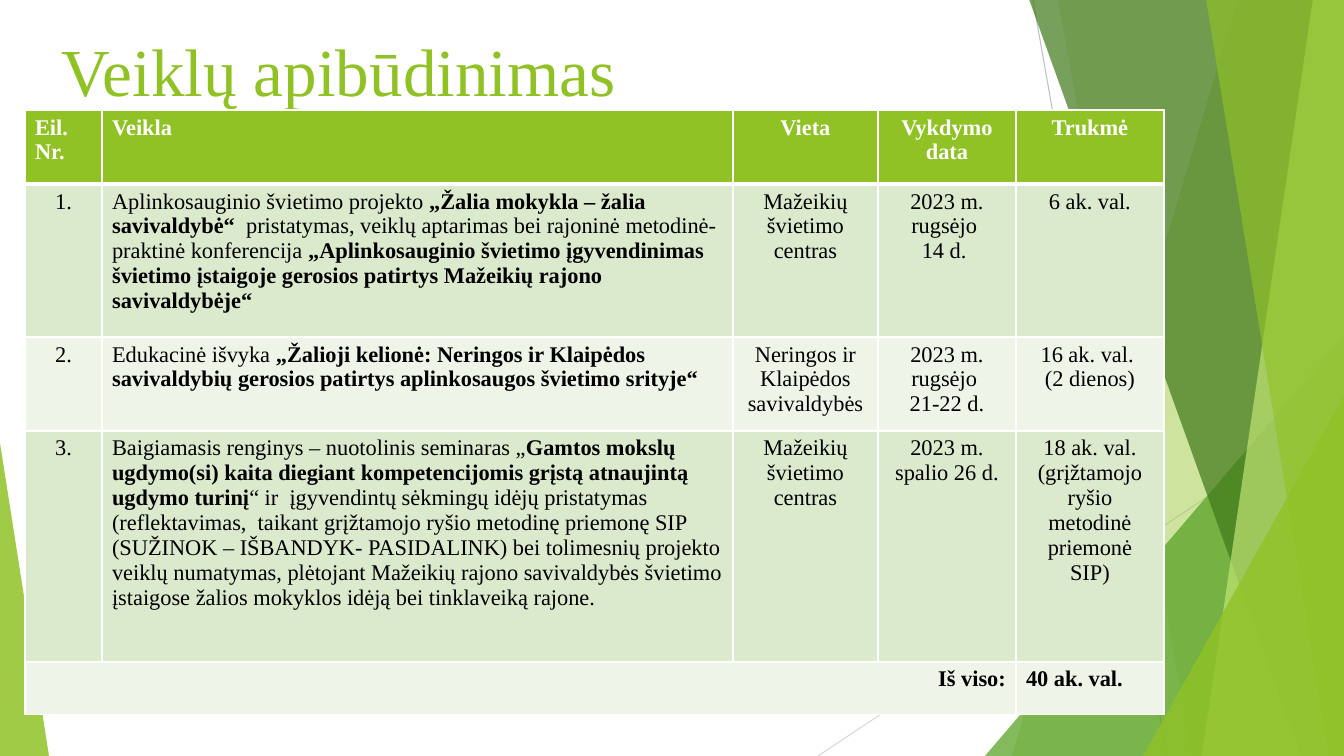
from dataclasses import dataclass

from lxml import etree
from pptx import Presentation
from pptx.dml.color import RGBColor
from pptx.enum.shapes import MSO_CONNECTOR, MSO_SHAPE
from pptx.enum.text import MSO_ANCHOR, PP_ALIGN
from pptx.oxml.ns import qn
from pptx.util import Pt

TRIANGLE = MSO_SHAPE.ISOSCELES_TRIANGLE
STRAIGHT = MSO_CONNECTOR.STRAIGHT
TOP = MSO_ANCHOR.TOP
LEFT, CENTER, RIGHT = PP_ALIGN.LEFT, PP_ALIGN.CENTER, PP_ALIGN.RIGHT

EMU_PER_PX = 914400 / 100.8
WIDTH, HEIGHT = 1344, 756


@dataclass(frozen=True)
class Theme:
    font: str = "Times New Roman"
    title_size: int = 48
    body_size: int = 16
    green: str = "90C226"
    mid_green: str = "54A021"
    dark_green: str = "3F7819"
    light_green: str = "C0E474"
    band_dark: str = "DBE9CD"
    band_light: str = "EEF4E8"
    white: str = "FFFFFF"
    black: str = "000000"
    grey: str = "BFBFBF"
    light_grey: str = "D9D9D9"


THEME = Theme()

COLUMNS = [77, 631, 145, 138, 148]
ROWS = [74, 153, 94, 231, 53]
ALIGNS = [CENTER, LEFT, CENTER, CENTER, CENTER]
HEADER_ALIGNS = [LEFT, LEFT, CENTER, CENTER, CENTER]

# Text between ** marks is bold
HEADER = ["Eil. Nr.", "Veikla", "Vieta", "Vykdymo data", "Trukmė"]
ACTIVITIES = [
    ["1.",
     "Aplinkosauginio švietimo projekto **„Žalia mokykla – žalia savivaldybė“**"
     "  pristatymas, veiklų aptarimas bei rajoninė metodinė-praktinė konferencija "
     "**„Aplinkosauginio švietimo įgyvendinimas švietimo įstaigoje gerosios "
     "patirtys Mažeikių rajono savivaldybėje“**",
     "Mažeikių švietimo centras", "2023 m. rugsėjo \n14 d. ", "6 ak. val."],
    ["2.",
     "Edukacinė išvyka **„Žalioji kelionė: Neringos ir Klaipėdos savivaldybių "
     "gerosios patirtys aplinkosaugos švietimo srityje“**",
     "Neringos ir Klaipėdos savivaldybės", "2023 m. rugsėjo \n21-22 d.",
     "16 ak. val. \n(2 dienos)"],
    ["3.",
     "Baigiamasis renginys – nuotolinis seminaras „**Gamtos mokslų ugdymo(si) "
     "kaita diegiant kompetencijomis grįstą atnaujintą ugdymo turinį**“ ir  "
     "įgyvendintų sėkmingų idėjų pristatymas (reflektavimas,  taikant grįžtamojo "
     "ryšio metodinę priemonę SIP (SUŽINOK – IŠBANDYK- PASIDALINK) bei tolimesnių "
     "projekto veiklų numatymas, plėtojant Mažeikių rajono savivaldybės švietimo "
     "įstaigose žalios mokyklos idėją bei tinklaveiką rajone.",
     "Mažeikių švietimo centras", "2023 m. spalio 26 d.",
     "18 ak. val.\n(grįžtamojo ryšio metodinė priemonė SIP)"],
]


def px(n):
    return round(n * EMU_PER_PX)


def rgb(color):
    return RGBColor.from_string(color)


def write(tf, text, size=THEME.body_size, color=THEME.black, bold=False, align=LEFT):
    tf.word_wrap = True
    for i, line in enumerate(text.split("\n")):
        p = tf.paragraphs[0] if i == 0 else tf.add_paragraph()
        p.alignment = align
        for j, part in enumerate(line.split("**")):
            if part:
                r = p.add_run()
                r.text = part
                r.font.name = THEME.font
                r.font.size = Pt(size)
                r.font.bold = bold or j % 2 == 1
                r.font.color.rgb = rgb(color)


def paint(sp, color, opacity):
    sp.shadow.inherit = False
    sp.line.fill.background()
    sp.fill.solid()
    sp.fill.fore_color.rgb = rgb(color)
    clr = sp.fill._xPr.find(qn("a:solidFill"))[0]
    etree.SubElement(clr, qn("a:alpha"), val=str(opacity * 1000))


def add_line(s, x1, y1, x2, y2, color):
    line = s.shapes.add_connector(STRAIGHT, px(x1), px(y1), px(x2), px(y2))
    line.line.color.rgb = rgb(color)
    line.line.width = Pt(0.75)
    etree.SubElement(line._element.spPr, qn("a:effectLst"))


def add_facet(s, top_x, bottom_x, color, opacity):
    """Band from a slanted edge to the right side of the slide."""
    fb = s.shapes.build_freeform(top_x, -1, scale=EMU_PER_PX)
    fb.add_line_segments([(WIDTH, -1), (WIDTH, HEIGHT), (bottom_x, HEIGHT)])
    paint(fb.convert_to_shape(), color, opacity)


def add_triangle(s, x, y, w, peak, color, opacity):
    sp = s.shapes.add_shape(TRIANGLE, px(x), px(y), px(w), px(HEIGHT - y))
    sp.adjustments[0] = peak
    paint(sp, color, opacity)


def add_title(s, text):
    tf = s.shapes.add_textbox(px(52), px(24), px(948), px(86)).text_frame
    tf.vertical_anchor = TOP
    tf.margin_top = px(5)
    write(tf, text, size=THEME.title_size, color=THEME.green)


def set_borders(cell, **widths):
    tcPr = cell._tc.get_or_add_tcPr()
    for side in "LRTB":
        ln = etree.SubElement(tcPr, qn(f"a:ln{side}"), w=str(Pt(widths.get(side, 1))))
        fill = etree.SubElement(ln, qn("a:solidFill"))
        etree.SubElement(fill, qn("a:srgbClr"), val=THEME.white)


def fill_cell(cell, color):
    cell.fill.solid()
    cell.fill.fore_color.rgb = rgb(color)


def add_activity_table(s):
    frame = s.shapes.add_table(len(ROWS), len(COLUMNS), px(25), px(110),
                               px(sum(COLUMNS)), px(sum(ROWS)))
    table = frame.table
    for col, w in zip(table.columns, COLUMNS):
        col.width = px(w)
    for row, h in zip(table.rows, ROWS):
        row.height = px(h)

    # Borders and bands, with a thick rule under the header
    fills = [THEME.green] + [THEME.band_dark, THEME.band_light] * 2
    thick = {0: {"B": 3}, 1: {"T": 3}}
    for i, color in enumerate(fills):
        for cell in table.rows[i].cells:
            set_borders(cell, **thick.get(i, {}))
            fill_cell(cell, color)

    # Header and activities
    for j, text in enumerate(HEADER):
        write(table.cell(0, j).text_frame, text, color=THEME.white, bold=True,
              align=HEADER_ALIGNS[j])
    for i, activity in enumerate(ACTIVITIES, start=1):
        for j, text in enumerate(activity):
            write(table.cell(i, j).text_frame, text, align=ALIGNS[j])

    # Total
    last = len(ROWS) - 1
    table.cell(last, 0).merge(table.cell(last, 3))
    write(table.cell(last, 0).text_frame, "Iš viso:", bold=True, align=RIGHT)
    write(table.cell(last, 4).text_frame, "40 ak. val.", bold=True)


def add_backdrop(s):
    add_line(s, 1033, 0, 1167, HEIGHT, THEME.grey)
    add_line(s, WIDTH, 406, 818, HEIGHT, THEME.light_grey)
    add_facet(s, 1238, 1012, THEME.green, 30)
    add_facet(s, 1058, 1192, THEME.green, 20)
    add_triangle(s, 985, 336, 359, 1, THEME.mid_green, 72)
    add_facet(s, 1029, 1301, THEME.dark_green, 70)
    add_facet(s, 1313, 1202, THEME.light_green, 70)
    add_facet(s, 1206, 1329, THEME.green, 65)
    add_triangle(s, 1143, 396, 201, 1, THEME.green, 80)
    add_triangle(s, 0, 443, 49, 0, THEME.green, 85)


def main():
    prs = Presentation()
    prs.slide_width, prs.slide_height = px(WIDTH), px(HEIGHT)
    s = prs.slides.add_slide(prs.slide_layouts[6])
    add_backdrop(s)
    add_title(s, "Veiklų apibūdinimas")
    add_activity_table(s)
    prs.save("out.pptx")


if __name__ == "__main__":
    main()
